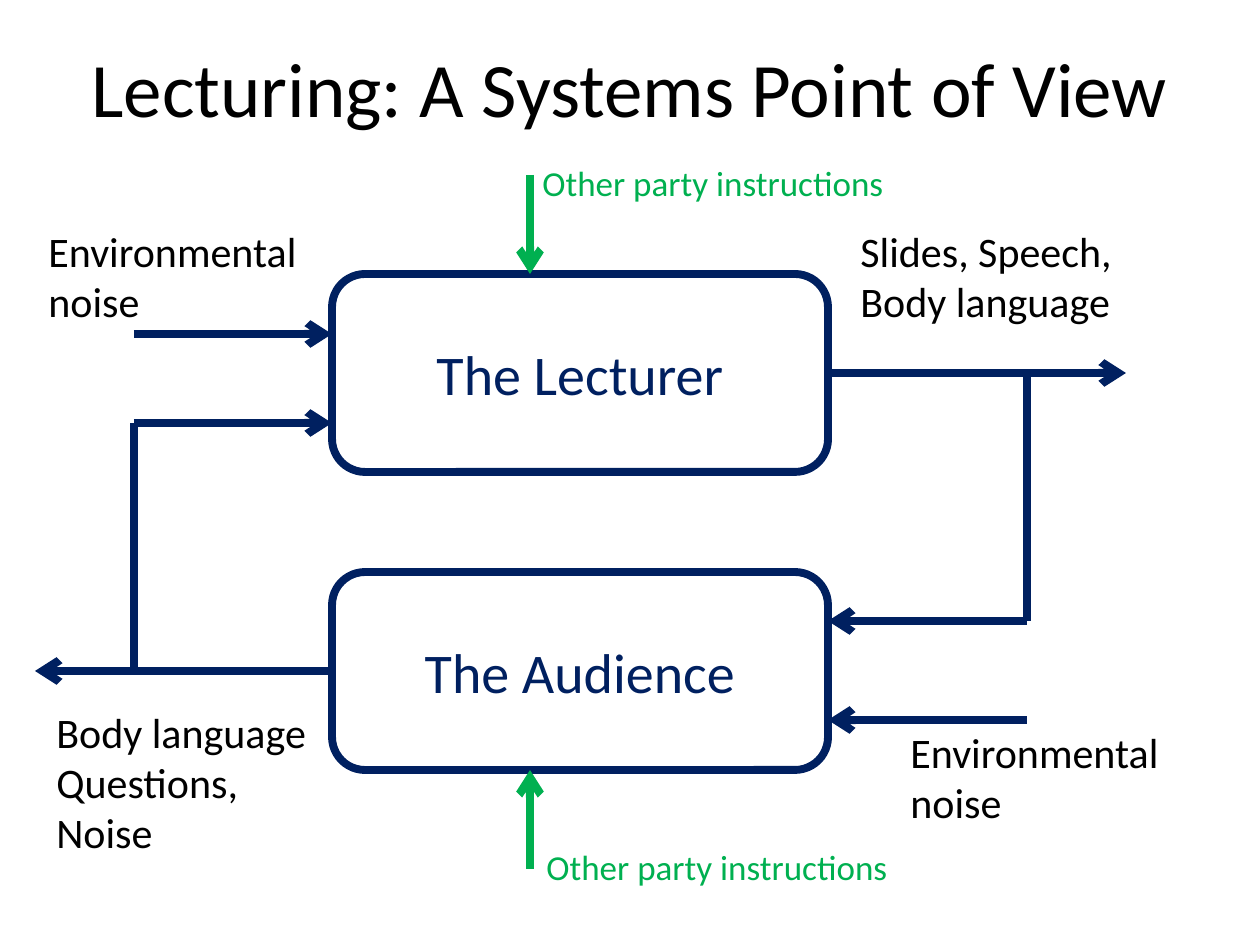
from lxml import etree
from pptx import Presentation
from pptx.dml.color import RGBColor
from pptx.enum.shapes import MSO_CONNECTOR, MSO_SHAPE
from pptx.enum.text import MSO_ANCHOR, MSO_AUTO_SIZE, PP_ALIGN
from pptx.oxml.ns import qn
from pptx.util import Emu, Pt

STRAIGHT = MSO_CONNECTOR.STRAIGHT
ROUNDED = MSO_SHAPE.ROUNDED_RECTANGLE
MIDDLE = MSO_ANCHOR.MIDDLE
CENTER = PP_ALIGN.CENTER
LEFT = PP_ALIGN.LEFT
GROW = MSO_AUTO_SIZE.SHAPE_TO_FIT_TEXT

PX_PER_INCH = 126
FONT = "Calibri"
NAVY, GREEN, BLACK = "002060", "00B050", "000000"
LINE_WIDTH = Pt(4.5)

TITLE = "Lecturing: A Systems Point of View"
TITLE_PLACE = (63, 8, 1134, 157)

BOX_LEFT, BOX_WIDTH, BOX_HEIGHT = 332, 496, 198
BOX_RIGHT = BOX_LEFT + BOX_WIDTH
LECTURER_TOP, AUDIENCE_TOP = 274, 572
LECTURER_MID = LECTURER_TOP + BOX_HEIGHT // 2
AUDIENCE_MID = AUDIENCE_TOP + BOX_HEIGHT // 2
PARTIES = [("The Lecturer", LECTURER_TOP), ("The Audience", AUDIENCE_TOP)]

LEFT_TURN, RIGHT_TURN = 134, 1027   # where the feedback paths turn
INSTRUCTION_X, INSTRUCTION_LENGTH = 530, 99
AUDIENCE_BOTTOM = AUDIENCE_TOP + BOX_HEIGHT

# start, end, colour, has arrowhead, party whose side it leaves, side
FLOWS = [
    ((BOX_RIGHT, LECTURER_MID), (1126, LECTURER_MID), NAVY, True, "The Lecturer", 3),
    ((BOX_LEFT, AUDIENCE_MID), (35, AUDIENCE_MID), NAVY, True, "The Audience", 1),
    ((LEFT_TURN, AUDIENCE_MID), (LEFT_TURN, 423), NAVY, False, None, None),
    ((LEFT_TURN, 423), (BOX_LEFT, 423), NAVY, True, None, None),
    ((RIGHT_TURN, LECTURER_MID), (RIGHT_TURN, 621), NAVY, False, None, None),
    ((RIGHT_TURN, 621), (BOX_RIGHT, 621), NAVY, True, None, None),
    ((LEFT_TURN, 334), (BOX_LEFT, 334), NAVY, True, None, None),
    ((RIGHT_TURN, 720), (BOX_RIGHT, 720), NAVY, True, None, None),
    ((INSTRUCTION_X, LECTURER_TOP - INSTRUCTION_LENGTH),
     (INSTRUCTION_X, LECTURER_TOP), GREEN, True, None, None),
    ((INSTRUCTION_X, AUDIENCE_BOTTOM + INSTRUCTION_LENGTH),
     (INSTRUCTION_X, AUDIENCE_BOTTOM), GREEN, True, None, None),
]

# text, place, size, colour, wraps
LABELS = [
    ("Slides, Speech,\nBody language", (848, 219, 280, 115), 24, BLACK, False),
    ("Body language\vQuestions,\vNoise", (44, 700, 277, 165), 24, BLACK, False),
    ("Environmental\nnoise", (898, 720, 276, 115), 24, BLACK, False),
    ("Environmental\nnoise", (36, 219, 276, 115), 24, BLACK, False),
    ("Other party instructions", (530, 155, 370, 55), 20, GREEN, True),
    ("Other party instructions", (534, 839, 370, 55), 20, GREEN, True),
]


def px(*lengths):
    return [Emu(round(length * 914400 / PX_PER_INCH)) for length in lengths]


def rgb(colour):
    return RGBColor.from_string(colour)


def write(frame, text, size, colour, align):
    frame.text = text
    for paragraph in frame.paragraphs:
        paragraph.alignment = align
        for run in paragraph.runs:
            run.font.name = FONT
            run.font.size = Pt(size)
            run.font.color.rgb = rgb(colour)


def add_party(slide, name, top):
    party = slide.shapes.add_shape(ROUNDED, *px(BOX_LEFT, top, BOX_WIDTH, BOX_HEIGHT))
    party.shadow.inherit = False
    party.fill.background()
    party.line.color.rgb = rgb(NAVY)
    party.line.width = LINE_WIDTH
    party.text_frame.vertical_anchor = MIDDLE
    write(party.text_frame, name, 32, NAVY, CENTER)
    return party


def add_flow(slide, start, end, colour, has_arrowhead):
    flow = slide.shapes.add_connector(STRAIGHT, *px(*start, *end))
    flow.line.color.rgb = rgb(colour)
    flow.line.width = LINE_WIDTH
    if has_arrowhead:
        etree.SubElement(flow.line._get_or_add_ln(), qn("a:tailEnd"), type="arrow")
    etree.SubElement(flow._element.spPr, qn("a:effectLst"))
    return flow


def add_label(slide, text, place, size, colour, wraps):
    frame = slide.shapes.add_textbox(*px(*place)).text_frame
    frame.word_wrap = wraps
    frame.auto_size = GROW
    write(frame, text, size, colour, LEFT)


def main():
    deck = Presentation()
    deck.slide_width, deck.slide_height = px(1260, 945)
    slide = deck.slides.add_slide(deck.slide_layouts[5])

    title = slide.shapes.title
    title.left, title.top, title.width, title.height = px(*TITLE_PLACE)
    title.text_frame.vertical_anchor = MIDDLE
    write(title.text_frame, TITLE, 44, BLACK, CENTER)

    parties = {name: add_party(slide, name, top) for name, top in PARTIES}
    for start, end, colour, has_arrowhead, source, side in FLOWS:
        flow = add_flow(slide, start, end, colour, has_arrowhead)
        if source:
            flow.begin_connect(parties[source], side)
    for label in LABELS:
        add_label(slide, *label)

    deck.save("out.pptx")


if __name__ == "__main__":
    main()
